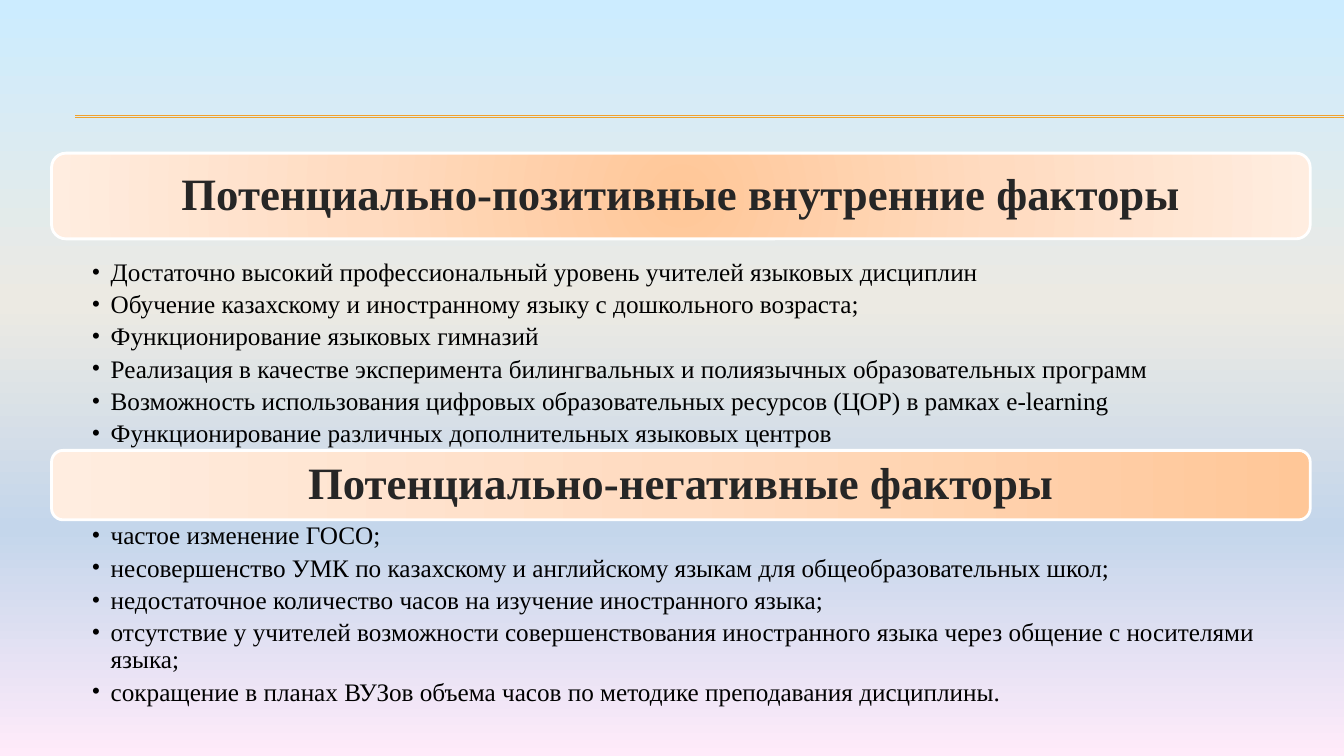
from lxml import etree
from pptx import Presentation
from pptx.dml.color import RGBColor
from pptx.enum.shapes import MSO_CONNECTOR, MSO_SHAPE
from pptx.enum.text import MSO_ANCHOR, PP_ALIGN
from pptx.oxml import parse_xml
from pptx.oxml.ns import nsdecls, qn
from pptx.util import Cm, Pt

STRAIGHT = MSO_CONNECTOR.STRAIGHT
ROUNDED = MSO_SHAPE.ROUNDED_RECTANGLE
MIDDLE, TOP = MSO_ANCHOR.MIDDLE, MSO_ANCHOR.TOP
CENTER, LEFT_ALIGNED = PP_ALIGN.CENTER, PP_ALIGN.LEFT

FONT = "Times New Roman"
LEFT, WIDTH = 1.3, 31.72
PEACH = [(0, "FFC798"), (50, "FFDBC0"), (100, "FFEDE0")]
SKY = [(0, "CCECFF"), (40, "ECEAE3"), (70, "C4D6EB"), (100, "FFEBFA")]
RADIAL = ('<a:path path="circle">'
          '<a:fillToRect l="50000" t="50000" r="50000" b="50000"/></a:path>')

POSITIVE = [
    "Достаточно высокий профессиональный уровень учителей языковых дисциплин",
    "Обучение казахскому и иностранному языку с дошкольного возраста;",
    "Функционирование языковых гимназий",
    "Реализация в качестве эксперимента билингвальных и полиязычных образовательных программ",
    "Возможность использования цифровых образовательных ресурсов (ЦОР) в рамках e-learning",
    "Функционирование различных дополнительных языковых центров",
]
NEGATIVE = [
    "частое изменение ГОСО;",
    "несовершенство УМК по казахскому и английскому языкам для общеобразовательных школ;",
    "недостаточное количество часов на изучение иностранного языка;",
    "отсутствие у учителей возможности совершенствования иностранного языка через общение с носителями языка;",
    "сокращение в планах ВУЗов объема часов по методике преподавания дисциплины.",
]


def rgb(value):
    return RGBColor.from_string(value)


def linear(angle):
    return f'<a:lin ang="{angle * 60000}" scaled="0"/>'


def set_gradient(fill, element, stops, direction):
    fill.gradient()
    grad = next(element.iter(qn("a:gradFill")))
    marks = "".join(f'<a:gs pos="{pos * 1000}"><a:srgbClr val="{color}"/></a:gs>'
                    for pos, color in stops)
    new = parse_xml(f'<a:gradFill {nsdecls("a")} rotWithShape="1">'
                    f'<a:gsLst>{marks}</a:gsLst>{direction}</a:gradFill>')
    grad[:] = list(new)


def set_frame(tf, anchor, left, top, right, bottom):
    tf.word_wrap = True
    tf.vertical_anchor = anchor
    tf.margin_left, tf.margin_top = Cm(left), Cm(top)
    tf.margin_right, tf.margin_bottom = Cm(right), Cm(bottom)


def write(p, text, size, color, align, bold=False):
    p.alignment = align
    p.line_spacing = 0.9
    r = p.add_run()
    r.text = text
    r.font.name, r.font.size, r.font.bold = FONT, Pt(size), bold
    r.font.color.rgb = rgb(color)


def add_bullet(p):
    pPr = p._p.get_or_add_pPr()
    pPr.set("marL", str(Cm(0.48)))
    pPr.set("indent", str(-Cm(0.48)))
    etree.SubElement(pPr, qn("a:buFont")).set("typeface", FONT)
    etree.SubElement(pPr, qn("a:buChar")).set("char", "•")


def add_rule(s, y):
    rule = s.shapes.add_connector(STRAIGHT, Cm(1.9), Cm(y), Cm(33.87), Cm(y))
    rule.line.fill.solid()
    rule.line.fill.fore_color.rgb = rgb("F0A22E")
    rule.line.width = Pt(0.75)
    etree.SubElement(rule._element.spPr, qn("a:effectLst"))
    rule._element.remove(rule._element.find(qn("p:style")))


def add_heading(s, top, height, text, direction):
    sp = s.shapes.add_shape(ROUNDED, Cm(LEFT), Cm(top), Cm(WIDTH), Cm(height))
    sp.shadow.inherit = False
    set_gradient(sp.fill, sp._element, PEACH, direction)
    sp.line.color.rgb = rgb("FFFFFF")
    sp.line.width = Pt(2)
    set_frame(sp.text_frame, MIDDLE, 0.33, 0.33, 0.33, 0.33)
    write(sp.text_frame.paragraphs[0], text, 32, "262626", CENTER, True)


def add_list(s, top, height, items):
    tf = s.shapes.add_textbox(Cm(LEFT), Cm(top), Cm(WIDTH), Cm(height)).text_frame
    set_frame(tf, TOP, 1.01, 0.08, 0.36, 0.08)
    for i, item in enumerate(items):
        p = tf.add_paragraph() if i else tf.paragraphs[0]
        write(p, item, 18, "000000", LEFT_ALIGNED)
        p.space_after = Pt(3.6)
        add_bullet(p)


def main():
    prs = Presentation()
    prs.slide_width, prs.slide_height = Cm(33.87), Cm(19.05)
    s = prs.slides.add_slide(prs.slide_layouts[6])
    set_gradient(s.background.fill, s._element, SKY, linear(90))
    for y in (2.92, 2.95):
        add_rule(s, y)
    add_heading(s, 3.86, 2.16, "Потенциально-позитивные внутренние факторы", RADIAL)
    add_list(s, 6.46, 4.87, POSITIVE)
    add_heading(s, 11.35, 1.75, "Потенциально-негативные факторы", linear(180))
    add_list(s, 13.1, 4.7, NEGATIVE)
    prs.save("out.pptx")


if __name__ == "__main__":
    main()
